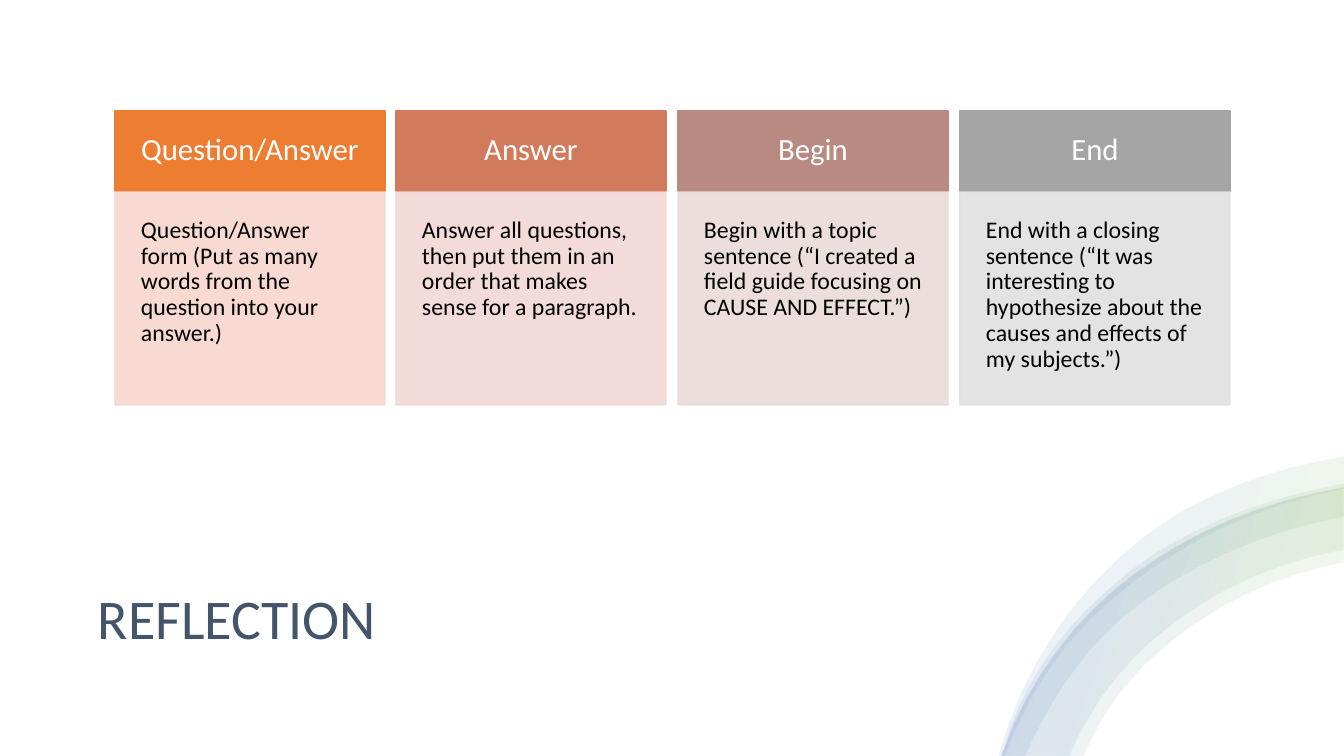
from lxml import etree
from pptx import Presentation
from pptx.dml.color import RGBColor
from pptx.enum.shapes import MSO_SHAPE
from pptx.enum.text import MSO_ANCHOR, MSO_AUTO_SIZE, PP_ALIGN
from pptx.oxml import parse_xml
from pptx.oxml.ns import qn
from pptx.util import Pt

RECT = MSO_SHAPE.RECTANGLE
TOP, MIDDLE = MSO_ANCHOR.TOP, MSO_ANCHOR.MIDDLE
LEFT, CENTER = PP_ALIGN.LEFT, PP_ALIGN.CENTER
NO_AUTOFIT = MSO_AUTO_SIZE.NONE

PX = 12192000 / 1344
FONT = "Calibri"
COLORS = {
    "title": "44546A", "white": "FFFFFF", "black": "000000",
    "green": "70AD47", "blue": "4472C4",
}


def write(tf, text, size, color, align, anchor, inset):
    tf.word_wrap = True
    tf.auto_size = NO_AUTOFIT
    tf.vertical_anchor = anchor
    tf.margin_left = tf.margin_right = tf.margin_top = tf.margin_bottom = round(inset * PX)
    p = tf.paragraphs[0]
    p.alignment = align
    p.line_spacing = 0.9
    r = p.add_run()
    r.text = text
    r.font.name = FONT
    r.font.size = Pt(size)
    r.font.color.rgb = RGBColor.from_string(COLORS[color])


def edge_points(nodes, steps=8):
    """Points in EMU along joined cubic Bezier curves."""
    points = []
    for start in range(0, len(nodes) - 1, 3):
        a, b, c, d = nodes[start:start + 4]
        for n in range(steps + 1):
            t = n / steps
            u = 1 - t
            points.append(tuple(
                PX * (u**3 * a[k] + 3 * u * u * t * b[k] + 3 * u * t * t * c[k] + t**3 * d[k])
                for k in (0, 1)))
    return list(dict.fromkeys(points))


prs = Presentation()
prs.slide_width = round(1344 * PX)
prs.slide_height = round(756 * PX)
s = prs.slides.add_slide(prs.slide_layouts[5])

# White backdrop, behind the title
backdrop = s.shapes.add_shape(RECT, 0, 0, prs.slide_width, prs.slide_height)
backdrop.shadow.inherit = False
backdrop.fill.solid()
backdrop.fill.fore_color.rgb = RGBColor.from_string(COLORS["white"])
backdrop.line.fill.background()

# Title
title = s.shapes.title
backdrop._element.addnext(title._element)
title.left, title.top, title.width, title.height = (round(v * PX) for v in (88, 556, 1166, 131))
write(title.text_frame, "REFLECTION", 40, "title", LEFT, MIDDLE, 10)

# Corner arcs: outer and inner edge, each two curves from left to right
main_edge = [(1002, 756), (1028, 679), (1078, 616), (1135, 574), (1191, 533), (1261, 502), (1344, 488)]
bands = [
    ([(999, 756), (1023, 668), (1074, 592), (1143, 538), (1201, 493), (1272, 469), (1344, 457)],
     [(1005, 756), (1027, 698), (1061, 644), (1108, 603), (1174, 545), (1257, 505), (1344, 489)]),
    (main_edge,
     [(1084, 756), (1103, 710), (1134, 671), (1171, 642), (1220, 602), (1281, 574), (1344, 563)]),
    ([(1001, 756), (1018, 692), (1055, 637), (1102, 595), (1166, 533), (1257, 500), (1344, 484)],
     [(1025, 756), (1047, 705), (1080, 654), (1123, 617), (1185, 565), (1264, 532), (1344, 517)]),
    (main_edge,
     [(1070, 756), (1091, 705), (1124, 663), (1163, 632), (1214, 590), (1277, 562), (1344, 550)]),
]
stops = "".join(
    f'<a:gs pos="{pos * 1000}"><a:srgbClr val="{COLORS[name]}"><a:alpha val="10000"/></a:srgbClr></a:gs>'
    for pos, name in ((2, "white"), (16, "green"), (85, "blue"), (100, "white")))
gradient = (
    '<a:gradFill xmlns:a="http://schemas.openxmlformats.org/drawingml/2006/main" rotWithShape="1">'
    f'<a:gsLst>{stops}</a:gsLst><a:lin ang="{200 * 60000}" scaled="0"/></a:gradFill>')
for outer, inner in bands:
    outline = edge_points(outer) + edge_points(inner)[::-1]
    builder = s.shapes.build_freeform(*outline[0], scale=1.0)
    builder.add_line_segments(outline[1:], close=True)
    arc = builder.convert_to_shape()
    arc.shadow.inherit = False
    arc.line.fill.background()
    arc._element.spPr.find(qn("a:custGeom")).addnext(parse_xml(gradient))

# Four cards: header above body
cards = [
    ("Question/Answer", "ED7D31", "F8D7CE",
     "Question/Answer form (Put as many words from the question into your answer.)"),
    ("Answer", "D17B5C", "F1D8D4",
     "Answer all questions, then put them in an order that makes sense for a paragraph."),
    ("Begin", "B98A82", "E9DBDA",
     "Begin with a topic sentence (“I created a field guide focusing on CAUSE AND EFFECT.”)"),
    ("End", "A5A5A5", "E1E1E1",
     "End with a closing sentence (“It was interesting to hypothesize about the causes "
     "and effects of my subjects.”)"),
]
for i, (heading, dark, light, body) in enumerate(cards):
    left = 115 + i * 845 // 3
    for top, height, fill, opacity, text_format in (
        (111, 80, dark, 100, (heading, 22, "white", CENTER, MIDDLE, 21)),
        (192, 213, light, 90, (body, 17, "black", LEFT, TOP, 26)),
    ):
        sp = s.shapes.add_shape(RECT, *(round(v * PX) for v in (left, top, 270, height)))
        sp.shadow.inherit = False
        sp.fill.solid()
        sp.fill.fore_color.rgb = RGBColor.from_string(fill)
        sp.line.color.rgb = RGBColor.from_string(fill)
        sp.line.width = Pt(1)
        if opacity < 100:
            for color in sp._element.spPr.iter(qn("a:srgbClr")):
                etree.SubElement(color, qn("a:alpha")).set("val", str(opacity * 1000))
        write(sp.text_frame, *text_format)

prs.save("out.pptx")
